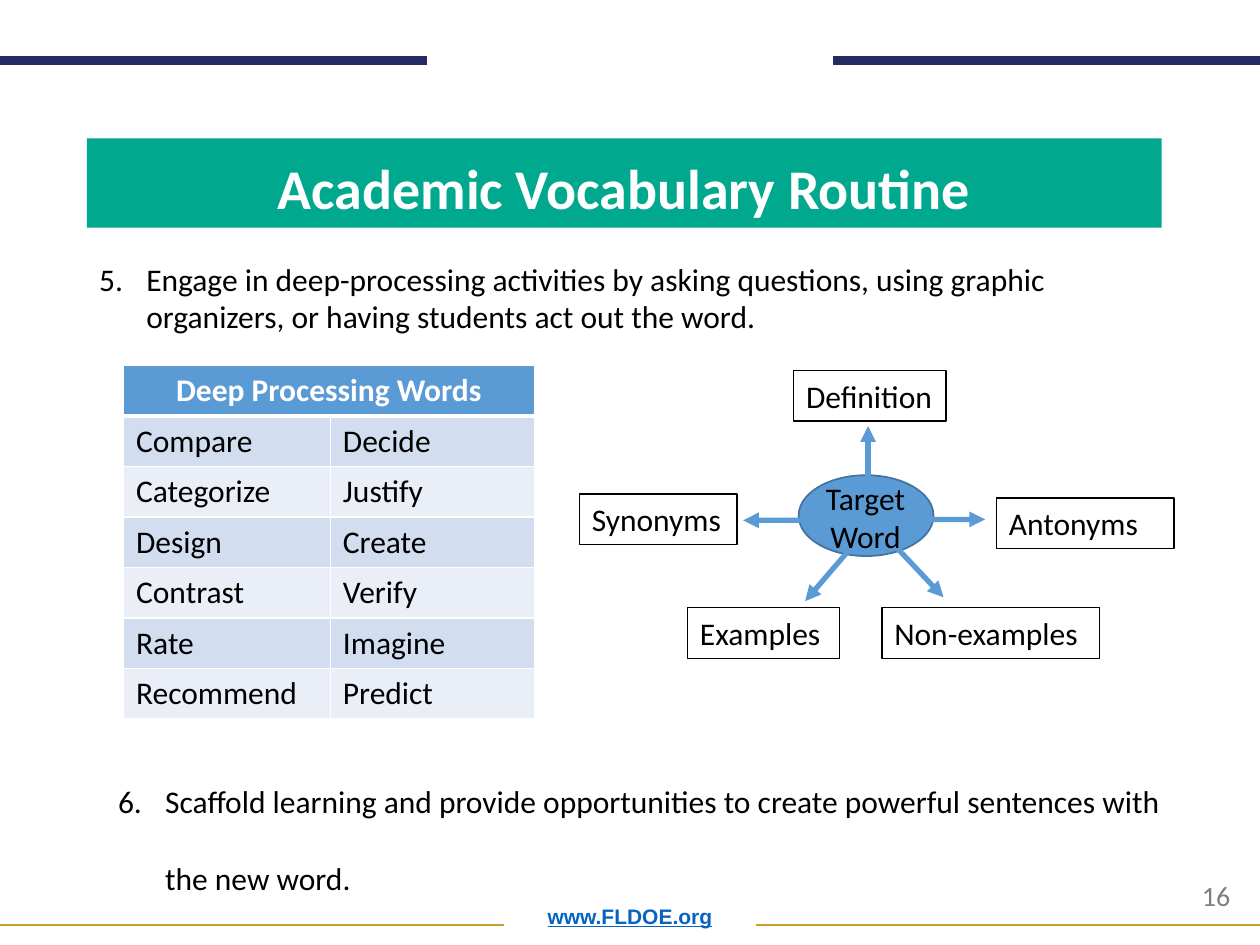
from lxml import etree
from pptx import Presentation
from pptx.dml.color import RGBColor
from pptx.enum.shapes import MSO_CONNECTOR, MSO_SHAPE
from pptx.enum.text import MSO_ANCHOR, PP_ALIGN
from pptx.oxml.ns import qn
from pptx.util import Cm, Pt

LEFT, MID = PP_ALIGN.LEFT, PP_ALIGN.CENTER
TOP, BASE = MSO_ANCHOR.TOP, MSO_ANCHOR.BOTTOM
RECT, OVAL = MSO_SHAPE.RECTANGLE, MSO_SHAPE.OVAL
STRAIGHT = MSO_CONNECTOR.STRAIGHT

HUES = {
    "navy": "262A63", "gold": "CD9D2C", "green": "00A88D", "blue": "5B9BD5",
    "edge": "43739E", "dark": "D2DEEF", "pale": "EAEFF7", "link": "0563C1",
    "gray": "7F7F7F", "black": "000000", "white": "FFFFFF",
}
WORDS = [
    ("Compare", "Decide"), ("Categorize", "Justify"), ("Design", "Create"),
    ("Contrast", "Verify"), ("Rate", "Imagine"), ("Recommend", "Predict"),
]
LABELS = [
    ("Synonyms", 0, 2.49, 3.18), ("Definition", 4.32, 0, 3.07),
    ("Antonyms", 8.41, 2.57, 3.58), ("Non-examples", 6.1, 4.78, 4.39),
    ("Examples", 2.18, 4.78, 3.07),
]
ARROWS = [
    (5.77, 3.23, 4.55, 4.65), (5.82, 1.12, 5.82, 3),
    (3.3, 3.02, 8.18, 3), (5.66, 2.79, 7.34, 4.57),
]


def hue(name):
    return RGBColor.from_string(HUES[name])


def write(frame, text, size=18, color="black", font="Calibri", bold=False,
          line=False, align=LEFT, anchor=TOP, lead=None, gap=0, hang=0):
    frame.word_wrap = True
    frame.vertical_anchor = anchor
    for i, part in enumerate(text.split("\n")):
        para = frame.add_paragraph() if i else frame.paragraphs[0]
        para.alignment = align
        para.line_spacing = lead
        if hang:
            props = para._p.get_or_add_pPr()
            props.set("marL", str(Cm(hang)))
            props.set("indent", str(0 if i else -Cm(hang)))
        if i:
            para.space_before = Pt(gap)
        run = para.add_run()
        run.text = part
        face = run.font
        face.name, face.size = font, Pt(size)
        face.bold, face.underline = bold, line
        face.color.rgb = hue(color)


def note(slide, box, text, **style):
    area = slide.shapes.add_textbox(*map(Cm, box))
    write(area.text_frame, text, **style)


def block(slide, kind, box, fill=None, edge=None, width=1):
    shape = slide.shapes.add_shape(kind, *map(Cm, box))
    shape.shadow.inherit = False
    if fill:
        shape.fill.solid()
        shape.fill.fore_color.rgb = hue(fill)
    else:
        shape.fill.background()
    if edge:
        shape.line.color.rgb = hue(edge)
        shape.line.width = Pt(width)
    else:
        shape.line.fill.background()
    return shape


def rule(slide, ends, color, width, heads=False):
    link = slide.shapes.add_connector(STRAIGHT, *map(Cm, ends))
    link.line.color.rgb = hue(color)
    link.line.width = Pt(width)
    if heads:
        for end in ("headEnd", "tailEnd"):
            etree.SubElement(link.line._ln, qn("a:" + end), type="triangle")
    etree.SubElement(link._element.spPr, qn("a:effectLst"))


def border(cell, low):
    props = cell._tc.get_or_add_tcPr()
    for side, width in (("L", 1), ("R", 1), ("T", 1), ("B", low)):
        edge = etree.SubElement(props, qn("a:ln" + side), w=str(Pt(width)))
        fill = etree.SubElement(edge, qn("a:solidFill"))
        etree.SubElement(fill, qn("a:srgbClr"), val=HUES["white"])


def frame_page(slide, wide, high):
    for y, span, color, width in ((1.22, 8.61, "navy", 5),
                                  (high - 0.41, 10.16, "gold", 1)):
        rule(slide, (0, y, span, y), color, width)
        rule(slide, (wide - span, y, wide, y), color, width)
    note(slide, (1.75, high - 1.27, wide - 3.5, 1.07), "www.FLDOE.org",
         size=12, color="link", font="Arial", bold=True, line=True,
         align=MID, anchor=BASE, lead=0.9)
    note(slide, (wide - 1.42, high - 1.47, 1.32, 0.94), "16",
         size=16, color="gray")


def title(slide, box):
    bar = block(slide, RECT, box, fill="green")
    write(bar.text_frame, "Academic Vocabulary Routine", size=32,
          color="white", bold=True, align=MID, anchor=BASE, lead=0.9)


def word_table(slide, x, y, cols=(4.17, 4.11), row=1.016):
    count = len(WORDS) + 1
    box = (x, y, sum(cols), row * count)
    table = slide.shapes.add_table(count, 2, *map(Cm, box)).table
    for col, width in zip(table.columns, cols):
        col.width = Cm(width)
    table.cell(0, 0).merge(table.cell(0, 1))
    for r, pair in enumerate([("Deep Processing Words", "")] + WORDS):
        head = r == 0
        fill = "blue" if head else "dark" if r % 2 else "pale"
        for c, word in enumerate(pair):
            cell = table.cell(r, c)
            border(cell, 3 if head else 1)
            cell.fill.solid()
            cell.fill.fore_color.rgb = hue(fill)
            if word:
                write(cell.text_frame, word, bold=head,
                      color="white" if head else "black",
                      align=MID if head else LEFT)


def word_map(slide, x, y):
    block(slide, OVAL, (x + 4.42, y + 2.11, 2.72, 1.63),
          fill="blue", edge="edge")
    for x1, y1, x2, y2 in ARROWS:
        rule(slide, (x + x1, y + y1, x + x2, y + y2), "blue", 3, heads=True)
    note(slide, (x + 4.27, y + 2.06, 3, 1.83), "Target\nWord", align=MID)
    for text, dx, dy, width in LABELS:
        tag = block(slide, RECT, (x + dx, y + dy, width, 1.02),
                    edge="black", width=0.75)
        write(tag.text_frame, text)


def main():
    deck = Presentation()
    deck.slide_width, deck.slide_height = Cm(25.4), Cm(19.05)
    slide = deck.slides.add_slide(deck.slide_layouts[6])
    frame_page(slide, 25.4, 19.05)
    title(slide, (1.75, 2.79, 21.67, 1.8))
    word_table(slide, 2.49, 7.37)
    note(slide, (1.75, 5.11, 21.62, 1.8),
         "5.\tEngage in deep-processing activities by asking questions, "
         "using graphic organizers, or having students act out the word.",
         hang=0.95)
    note(slide, (2.13, 15.65, 21.62, 2.6),
         "6.\tScaffold learning and provide opportunities to create "
         "powerful sentences with\nthe new word.", hang=0.95, gap=22)
    word_map(slide, 11.68, 7.47)
    deck.save("out.pptx")


if __name__ == "__main__":
    main()
